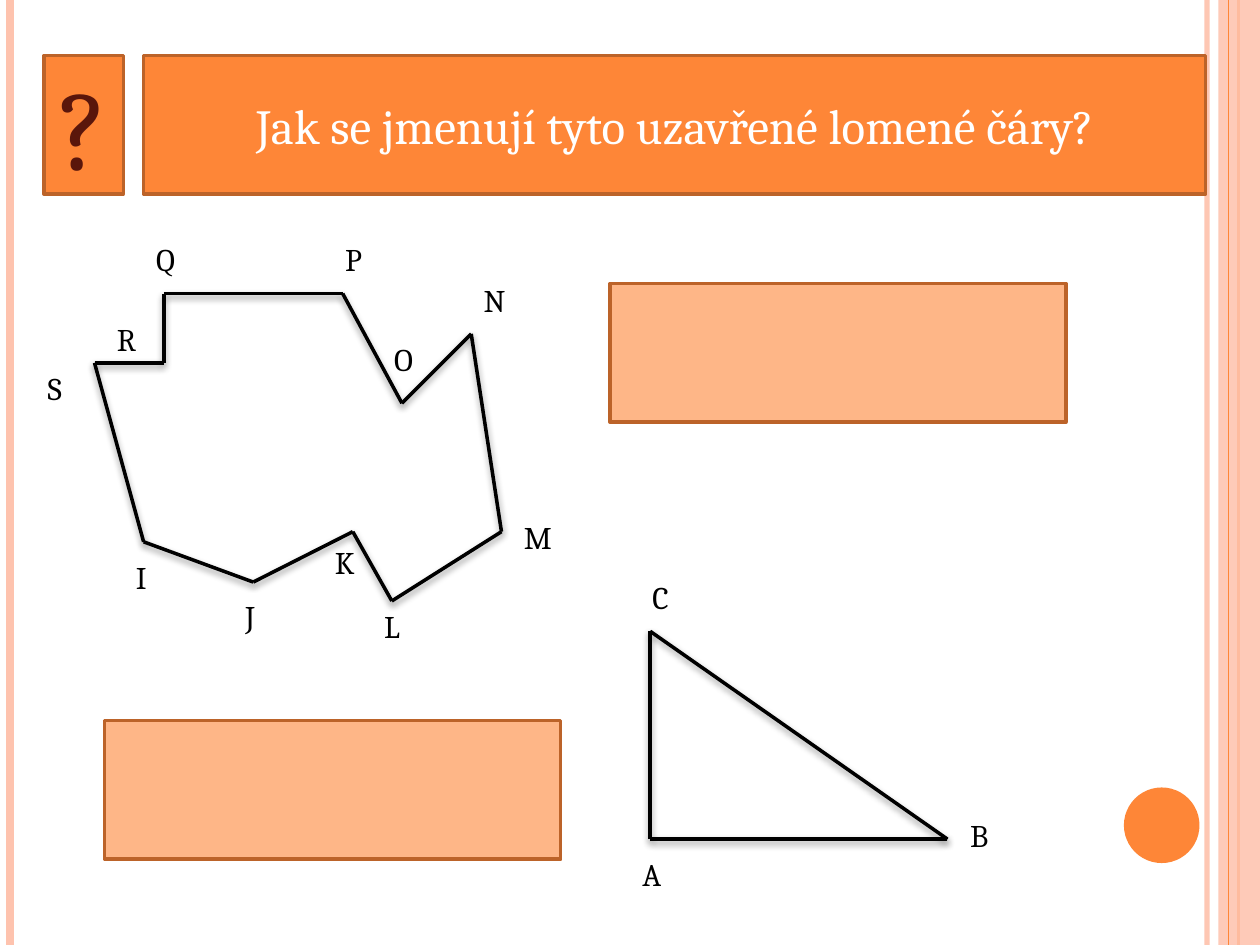
"""Builds a geometry quiz slide that asks for the names of two closed polylines."""
from dataclasses import dataclass
from itertools import pairwise
from typing import Optional

from lxml.etree import SubElement
from pptx import Presentation
from pptx.dml.color import RGBColor
from pptx.enum.shapes import MSO_CONNECTOR as Connector, MSO_SHAPE as Preset
from pptx.enum.text import MSO_ANCHOR as Anchor, MSO_AUTO_SIZE as AutoSize, PP_ALIGN as Align
from pptx.oxml.ns import qn
from pptx.util import Inches, Pt

FONT = "Cambria"
BLACK, WHITE, MAROON = "000000", "FFFFFF", "5A160B"
ORANGE, DARK_ORANGE, LIGHT_ORANGE, PINK = "FE8637", "BC6329", "FEB687", "FEC3AE"
PAGE_WIDTH, PAGE_HEIGHT = 10, 7.5
BOX_HEIGHT = 1.1
LABEL_HEIGHT = 0.4


@dataclass(frozen=True)
class Stripe:
    x: float
    color: str
    weight: float
    opacity: int = 100


@dataclass(frozen=True)
class Panel:
    left: float
    top: float
    width: float
    height: float
    fill: str
    border: Optional[str] = DARK_ORANGE
    preset: Preset = Preset.RECTANGLE
    opacity: int = 100
    text: str = ""
    size: int = 28
    color: str = WHITE


@dataclass(frozen=True)
class Label:
    text: str
    left: float
    top: float
    width: float = 0.39


@dataclass(frozen=True)
class Polygon:
    points: tuple
    labels: tuple


LEFT_STRIPES = (Stripe(9.58, PINK, 3, 93), Stripe(0.08, PINK, 4.5), Stripe(9.83, ORANGE, 1.5))
BAND = Panel(9.67, 0, 0.33, PAGE_HEIGHT, PINK, border=None, opacity=87)
BAND_STRIPE = Stripe(9.75, ORANGE, 0.75)
PANELS = (
    Panel(8.92, 6.25, 0.6, 0.6, ORANGE, border=None, preset=Preset.OVAL),
    Panel(1.14, 0.44, 8.43, BOX_HEIGHT, ORANGE, text="Jak se jmenují tyto uzavřené lomené čáry?"),
    Panel(0.35, 0.44, 0.63, BOX_HEIGHT, ORANGE, text="?", size=66, color=MAROON),
    Panel(4.84, 2.25, 3.62, BOX_HEIGHT, LIGHT_ORANGE),
    Panel(0.83, 5.72, 3.62, BOX_HEIGHT, LIGHT_ORANGE),
)
POLYGONS = (
    Polygon(
        ((1.3, 2.33), (2.72, 2.33), (3.19, 3.2), (3.74, 2.65), (3.98, 4.22), (3.11, 4.77),
         (2.8, 4.22), (2.01, 4.62), (1.14, 4.3), (0.75, 2.88), (1.3, 2.88)),
        (Label("P", 2.64, 1.86, 0.31), Label("O", 3.03, 2.65), Label("N", 3.74, 2.18),
         Label("M", 4.06, 4.06), Label("L", 2.95, 4.77), Label("K", 2.56, 4.26, 0.31),
         Label("J", 1.85, 4.69, 0.47), Label("I", 0.98, 4.38), Label("S", 0.28, 2.88, 0.47),
         Label("Q", 1.14, 1.86, 0.31), Label("R", 0.83, 2.49, 0.47)),
    ),
    Polygon(
        ((5.16, 5.01), (7.52, 6.66), (5.16, 6.66)),
        (Label("A", 5, 6.74, 0.87), Label("B", 7.6, 6.43), Label("C", 5.08, 4.54)),
    ),
)


def rgb(color: str) -> RGBColor:
    """Turn a hex string into a colour."""
    return RGBColor.from_string(color)


def apply(target, values: dict) -> None:
    """Set every attribute named in a dict of format values."""
    for name, value in values.items():
        setattr(target, name, value)


def add_alpha(color_element, opacity: int) -> None:
    """Give a colour element an opacity in percent."""
    SubElement(color_element, qn("a:alpha"), val=str(opacity * 1000))


def set_opacity(element, opacity: int) -> None:
    """Make the first solid colour below an element partly transparent."""
    if opacity < 100:
        add_alpha(next(element.iter(qn("a:srgbClr"))), opacity)


def write(frame, text: str, size: int, color: str, align: Align) -> None:
    """Write one formatted line of text into a frame."""
    para = frame.paragraphs[0]
    para.alignment = align
    span = para.add_run()
    span.text = text
    apply(span.font, {"name": FONT, "size": Pt(size)})
    span.font.color.rgb = rgb(color)


def draw_line(page, start: tuple, end: tuple, color: str, weight: float,
              opacity: int = 100, shadow: bool = False) -> None:
    """Draw a straight line, with a soft shadow below it if asked."""
    line = page.shapes.add_connector(Connector.STRAIGHT, *map(Inches, start + end))
    line.line.color.rgb = rgb(color)
    line.line.width = Pt(weight)
    properties = line._element.spPr
    set_opacity(properties, opacity)
    effects = SubElement(properties, qn("a:effectLst"))
    if shadow:
        outer = SubElement(effects, qn("a:outerShdw"), blurRad=str(Pt(4)), dist=str(Pt(2)),
                           dir="5400000", rotWithShape="0")
        add_alpha(SubElement(outer, qn("a:srgbClr"), val=BLACK), 40)


def draw_stripe(page, stripe: Stripe) -> None:
    """Draw a vertical line over the full height of the page."""
    draw_line(page, (stripe.x, 0), (stripe.x, PAGE_HEIGHT), stripe.color, stripe.weight,
              stripe.opacity)


def draw_panel(page, panel: Panel) -> None:
    """Draw a filled shape with its border and text."""
    box = page.shapes.add_shape(
        panel.preset, *map(Inches, (panel.left, panel.top, panel.width, panel.height)))
    box.shadow.inherit = False
    box.fill.solid()
    box.fill.fore_color.rgb = rgb(panel.fill)
    set_opacity(box._element.spPr, panel.opacity)
    if panel.border:
        box.line.color.rgb = rgb(panel.border)
        box.line.width = Pt(2)
    else:
        box.line.fill.background()
    if panel.text:
        apply(box.text_frame, {"vertical_anchor": Anchor.MIDDLE, "word_wrap": True})
        write(box.text_frame, panel.text, panel.size, panel.color, Align.CENTER)


def draw_label(page, label: Label) -> None:
    """Write the letter of a vertex."""
    box = page.shapes.add_textbox(
        *map(Inches, (label.left, label.top, label.width, LABEL_HEIGHT)))
    apply(box.text_frame, {"word_wrap": True, "auto_size": AutoSize.SHAPE_TO_FIT_TEXT})
    write(box.text_frame, label.text, 18, BLACK, Align.LEFT)


def draw_polygon(page, polygon: Polygon) -> None:
    """Draw the sides of a closed polyline and its letters."""
    for start, end in pairwise(polygon.points + polygon.points[:1]):
        draw_line(page, start, end, BLACK, 2, shadow=True)
    for label in polygon.labels:
        draw_label(page, label)


def main() -> None:
    """Build the deck and save it."""
    deck = Presentation()
    apply(deck, {"slide_width": Inches(PAGE_WIDTH), "slide_height": Inches(PAGE_HEIGHT)})
    page = deck.slides.add_slide(deck.slide_layouts[6])
    for stripe in LEFT_STRIPES:
        draw_stripe(page, stripe)
    draw_panel(page, BAND)
    draw_stripe(page, BAND_STRIPE)
    for panel in PANELS:
        draw_panel(page, panel)
    for polygon in POLYGONS:
        draw_polygon(page, polygon)
    deck.save("out.pptx")


if __name__ == "__main__":
    main()
